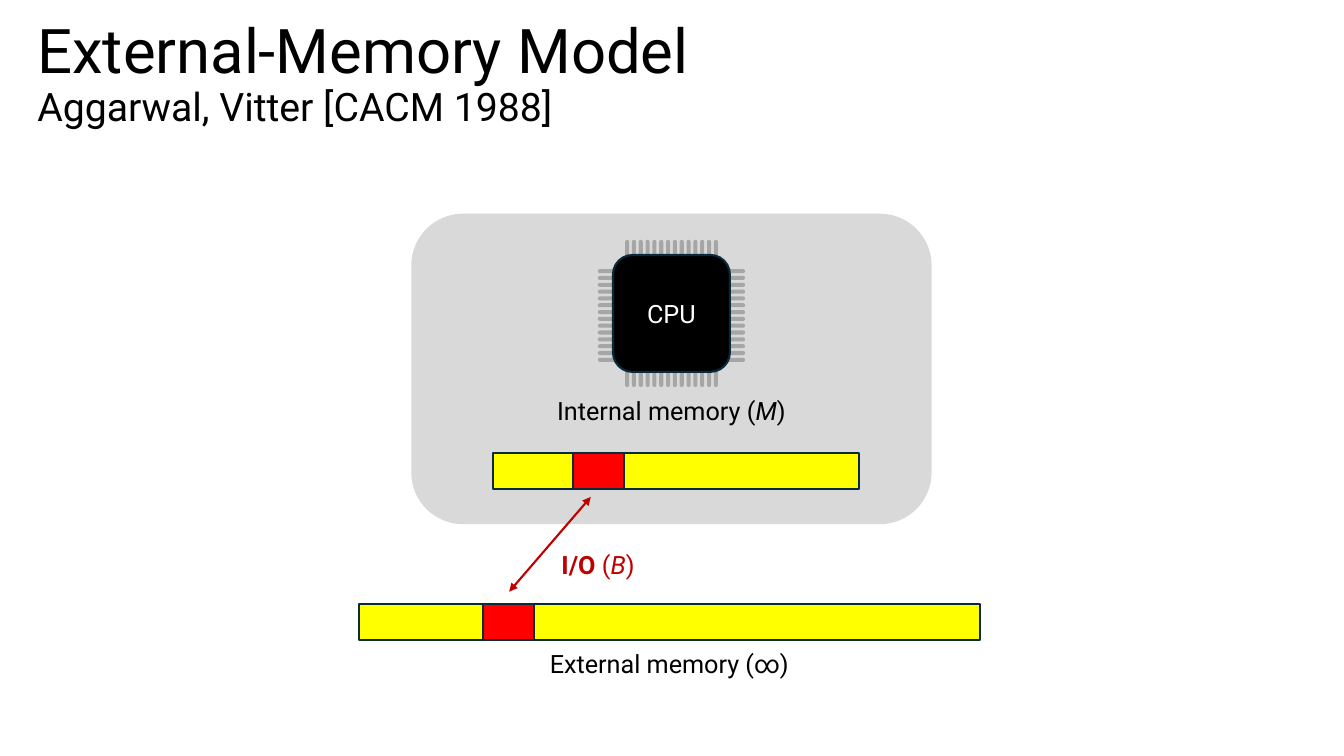
from lxml.etree import SubElement
from pptx import Presentation
from pptx.dml.color import RGBColor
from pptx.enum.shapes import MSO_CONNECTOR, MSO_SHAPE as SHAPE
from pptx.enum.text import MSO_ANCHOR as ANCHOR, MSO_AUTO_SIZE as AUTO, PP_ALIGN as ALIGN
from pptx.oxml.ns import qn
from pptx.util import Inches, Pt

FONT = "Roboto"
COLORS = {
    "text": "000000",
    "chip": "000000",
    "chip_text": "FFFFFF",
    "machine": "D9D9D9",
    "pin": "A6A6A6",
    "memory": "FFFF00",
    "block": "FF0000",
    "outline": "092A39",
    "io": "C00000",
}


def rgb(name):
    return RGBColor.from_string(COLORS[name])


def add_run(p, text, size=18, color="text", bold=False, italic=False):
    r = p.add_run()
    r.text = text
    f = r.font
    f.name, f.size, f.bold, f.italic = FONT, Pt(size), bold, italic
    f.color.rgb = rgb(color)


def add_box(s, kind, x, y, w, h, fill, outline=None):
    sp = s.shapes.add_shape(kind, Inches(x), Inches(y), Inches(w), Inches(h))
    sp.shadow.inherit = False
    sp.fill.solid()
    sp.fill.fore_color.rgb = rgb(fill)
    if outline:
        sp.line.color.rgb = rgb(outline)
        sp.line.width = Pt(1.5)
    else:
        sp.line.fill.background()
    return sp


def add_label(s, x, y, w, h, runs, align=ALIGN.CENTER, color="text"):
    tf = s.shapes.add_textbox(Inches(x), Inches(y), Inches(w), Inches(h)).text_frame
    tf.word_wrap = True
    p = tf.paragraphs[0]
    p.alignment = align
    for text, style in runs:
        add_run(p, text, color=color, **style)


def add_title(s, x, y, w, h, title, subtitle):
    sp = s.shapes.title
    sp.left, sp.top, sp.width, sp.height = (Inches(v) for v in (x, y, w, h))
    tf = sp.text_frame
    tf.word_wrap = True
    tf.auto_size = AUTO.NONE
    tf.vertical_anchor = ANCHOR.MIDDLE
    p = tf.paragraphs[0]
    p.alignment = ALIGN.LEFT
    p.line_spacing = 0.9
    add_run(p, title, size=44)
    p.add_line_break()
    add_run(p, subtitle, size=28)


def add_cpu(s, x, y, size):
    pins, thick, margin = 14, 0.04, 0.29
    pitch = (size - 2 * margin) / (pins - 1)
    for i in range(pins):
        offset = margin + i * pitch
        across = add_box(s, SHAPE.ROUNDED_RECTANGLE, x, y + offset, size, thick, "pin")
        down = add_box(s, SHAPE.ROUNDED_RECTANGLE, x + offset - size / 2,
                       y + (size - thick) / 2, size, thick, "pin")
        down.rotation = 90
        for pin in (across, down):
            pin.adjustments[0] = 0.5
    inset = 0.15
    chip = add_box(s, SHAPE.ROUNDED_RECTANGLE, x + inset, y + inset,
                   size - 2 * inset, size - 2 * inset, "chip", "outline")
    tf = chip.text_frame
    tf.margin_left = tf.margin_right = 0
    tf.vertical_anchor = ANCHOR.MIDDLE
    p = tf.paragraphs[0]
    p.alignment = ALIGN.CENTER
    add_run(p, "CPU", color="chip_text")


def add_memory(s, x, y, w, block_offset):
    h, block_w = 0.36, 0.51
    add_box(s, SHAPE.RECTANGLE, x, y, w, h, "memory", "outline")
    add_box(s, SHAPE.RECTANGLE, x + block_offset, y, block_w, h, "block", "outline")


def add_machine(s, x, y, w, h):
    add_box(s, SHAPE.ROUNDED_RECTANGLE, x, y, w, h, "machine")
    add_cpu(s, x + 1.85, y + 0.26, 1.46)
    add_memory(s, x + 0.81, y + 2.37, 3.63, 0.79)
    add_label(s, x, y + 1.75, w, 0.4,
              [("Internal memory (", {}), ("M", {"italic": True}), (")", {})])


def add_external(s, x, y, w):
    add_memory(s, x, y, w, 1.23)
    add_label(s, x + 0.5, y + 0.39, w - 1, 0.4, [("External memory (∞)", {})])


def add_transfer(s, x, y, w, h):
    line = s.shapes.add_connector(MSO_CONNECTOR.STRAIGHT, Inches(x), Inches(y + h),
                                  Inches(x + w), Inches(y))
    line.line.color.rgb = rgb("io")
    line.line.width = Pt(1.5)
    ln = line.line._get_or_add_ln()
    for end in ("a:headEnd", "a:tailEnd"):
        SubElement(ln, qn(end), type="triangle")
    SubElement(line._element.spPr, qn("a:effectLst"))
    add_label(s, x + 0.42, y + 0.47, 3.89, 0.4,
              [("I/O", {"bold": True}), (" (", {}), ("B", {"italic": True}), (")", {})],
              align=ALIGN.LEFT, color="io")


def main():
    prs = Presentation()
    prs.slide_width, prs.slide_height = Inches(13.33), Inches(7.5)
    s = prs.slides.add_slide(prs.slide_layouts[5])
    add_title(s, 0.27, 0.02, 11.5, 1.45,
              "External-Memory Model", "Aggarwal, Vitter [CACM 1988]")
    add_machine(s, 4.08, 2.12, 5.16, 3.08)
    add_external(s, 3.56, 5.99, 6.16)
    add_transfer(s, 5.05, 4.93, 0.81, 0.94)
    prs.save("out.pptx")


if __name__ == "__main__":
    main()
